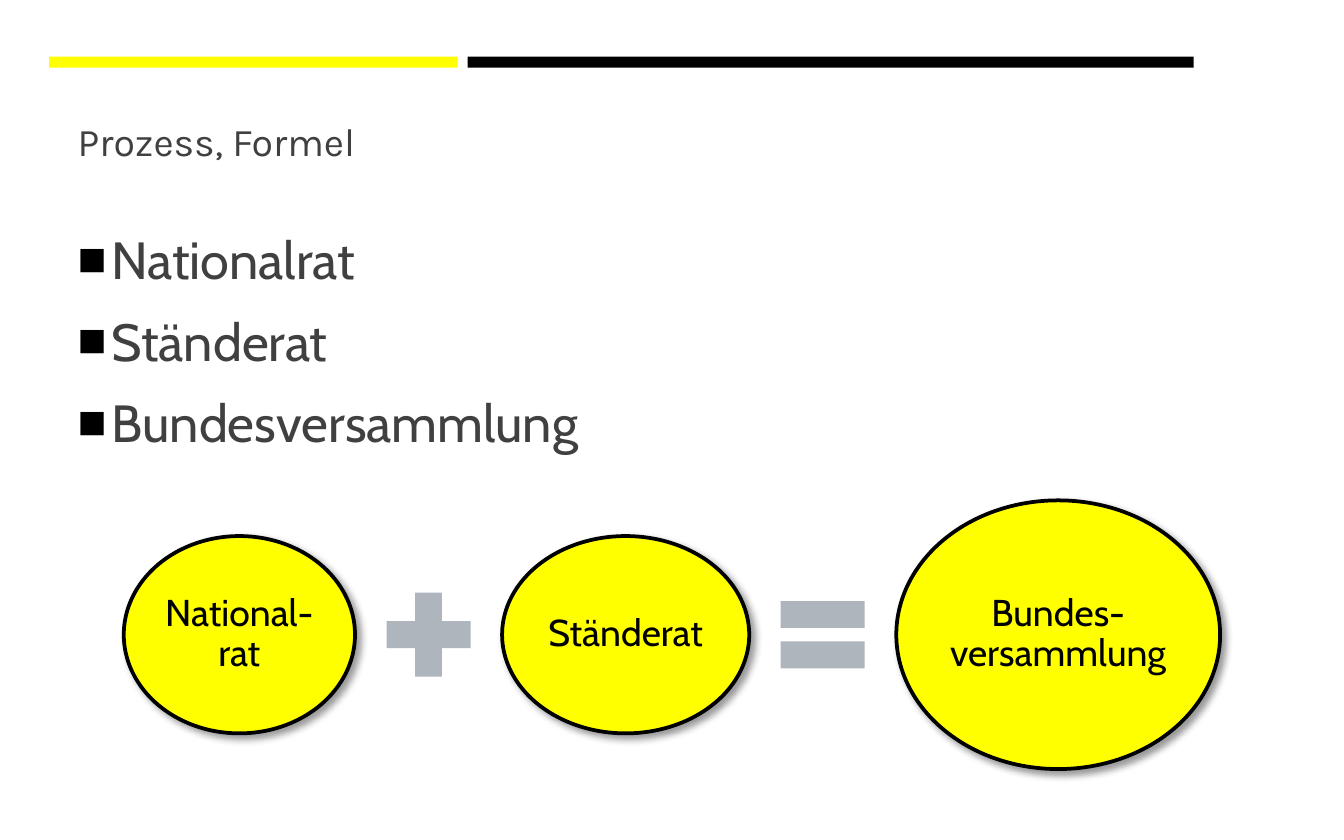
from pptx import Presentation
from pptx.dml.color import RGBColor as Rgb
from pptx.enum.shapes import MSO_SHAPE as Kind
from pptx.enum.text import MSO_ANCHOR as Anchor, PP_ALIGN as Align
from pptx.oxml import parse_xml as parse
from pptx.oxml.ns import nsdecls
from pptx.util import Cm, Pt

YELLOW, BLACK, GREY, DARK = "FFFF00", "000000", "AEB5BC", "404040"
BARS = [(0.93, 7.72, YELLOW), (8.84, 13.72, BLACK)]
TITLE = "Prozess, Formel"
ITEMS = ["Nationalrat", "Ständerat", "Bundesversammlung"]
CHAIN = [
    (Kind.OVAL, 4.37, 3.73, "National-rat"),
    (Kind.MATH_PLUS, 2.16, 2.16, ""),
    (Kind.OVAL, 4.67, 3.73, "Ständerat"),
    (Kind.MATH_EQUAL, 2.16, 2.16, ""),
    (Kind.OVAL, 6.12, 5.08, "Bundes-versammlung"),
]
LEFT, MID, GAP = 2.34, 12, 0.31
HEAD = {"name": "Karla", "size": Pt(21)}
BODY = {"name": "Cabin", "size": Pt(28)}
LABEL = {"name": "Cabin", "size": Pt(20)}
FRAME = {"word_wrap": True, "vertical_anchor": Anchor.MIDDLE}
INSET = {f"margin_{side}": Cm(0.08) for side in ("left", "top", "right", "bottom")}
BULLET = (
    f'<a:buClr {nsdecls("a")}><a:srgbClr val="{BLACK}"/></a:buClr>',
    f'<a:buSzPct {nsdecls("a")} val="92000"/>',
    f'<a:buFont {nsdecls("a")} typeface="Arial"/>',
    f'<a:buChar {nsdecls("a")} char="■"/>',
)
SHADOW = (
    f'<a:effectLst {nsdecls("a")}><a:outerShdw blurRad="{Pt(4)}" dist="{Pt(3)}" '
    f'dir="2700000" algn="tl" rotWithShape="0"><a:srgbClr val="{BLACK}">'
    '<a:alpha val="40000"/></a:srgbClr></a:outerShdw></a:effectLst>'
)


def tint(code):
    return Rgb.from_string(code)


def apply(thing, form):
    for key, value in form.items():
        setattr(thing, key, value)


def write(para, text, form, code):
    para.text = text
    apply(para.font, form)
    para.font.color.rgb = tint(code)


def draw(kind, x, y, w, h, code):
    shape = slide.shapes.add_shape(kind, Cm(x), Cm(y), Cm(w), Cm(h))
    shape.shadow.inherit = False
    shape.fill.solid()
    shape.fill.fore_color.rgb = tint(code)
    shape.line.fill.background()
    return shape


def frame(y, h, form):
    box = slide.shapes.add_textbox(Cm(1.22), Cm(y), Cm(22.99), Cm(h)).text_frame
    apply(box, form)
    return box


def label(shape, text):
    shape.line.color.rgb = tint(BLACK)
    shape.line.width = Pt(2)
    props = shape._element.spPr
    props.remove(props.find("{*}effectLst"))
    props.append(parse(SHADOW))
    apply(shape.text_frame, FRAME | INSET)
    para = shape.text_frame.paragraphs[0]
    apply(para, {"alignment": Align.CENTER, "line_spacing": 0.9})
    write(para, text, LABEL, BLACK)


deck = Presentation()
apply(deck, {"slide_width": Cm(25.4), "slide_height": Cm(15.88)})
slide = deck.slides.add_slide(deck.slide_layouts[6])

for x, w, code in BARS:
    draw(Kind.RECTANGLE, x, 1.07, w, 0.21, code)

write(frame(1.63, 2.06, FRAME).paragraphs[0], TITLE, HEAD, DARK)

body = frame(4.17, 5.11, {"word_wrap": True})
for i, item in enumerate(ITEMS):
    para = body.add_paragraph() if i else body.paragraphs[0]
    props = para._p.get_or_add_pPr()
    apply(para, {"space_before": Pt(5.6 if i else 0), "space_after": Pt(4.5)})
    props.set("marL", str(Cm(0.64)))
    props.set("indent", str(-Cm(0.64)))
    for part in BULLET:
        props.append(parse(part))
    write(para, item, BODY, DARK)

x = LEFT
for kind, w, h, text in CHAIN:
    shape = draw(kind, x, MID - h / 2, w, h, YELLOW if text else GREY)
    if text:
        label(shape, text)
    x += w + GAP

deck.save("out.pptx")
